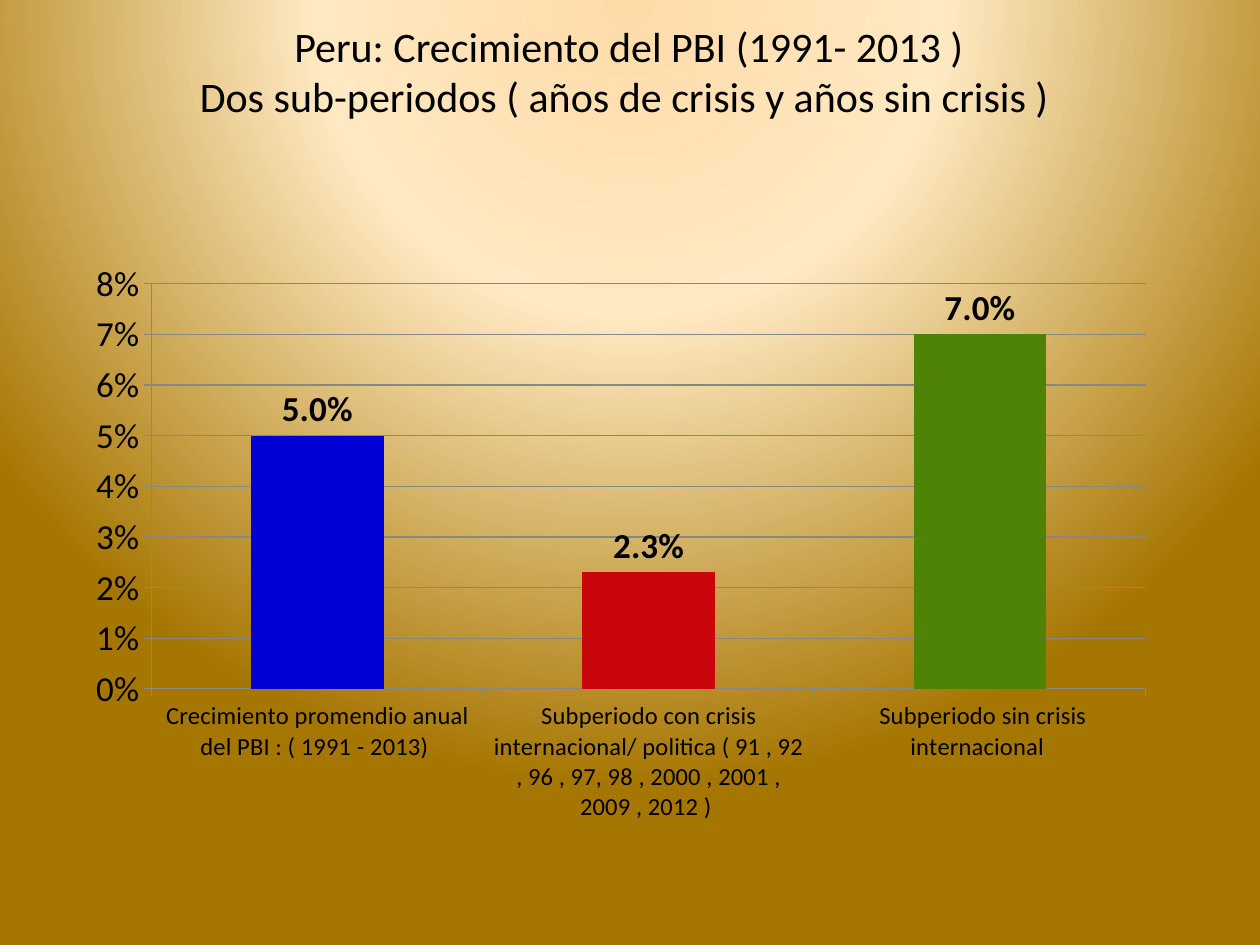
from dataclasses import dataclass

import pptx
import pptx.chart.data
import pptx.dml.color
import pptx.enum.chart
import pptx.enum.text
import pptx.oxml
import pptx.oxml.ns
import pptx.util

EMU_PER_PX = 914400 / 126
FONT = "Calibri"
COLORS = {
    "text": "000000",
    "grid": "878787",
    "average": "0000D5",
    "crisis": "CA060D",
    "calm": "4E8305",
    "glow": "FFDBA9",
    "cream": "FFE9C2",
    "ochre": "A67602",
}


@dataclass
class Period:
    label: str
    growth: float
    color: str


@dataclass
class Box:
    left: int
    top: int
    width: int
    height: int

    def emu(self) -> list[int]:
        return [px(n) for n in (self.left, self.top, self.width, self.height)]


PERIODS = [
    Period("Crecimiento promendio anual del PBI : ( 1991 - 2013) ", 0.05, "average"),
    Period(
        "Subperiodo con crisis internacional/ politica "
        "( 91 , 92 , 96 , 97, 98 , 2000 , 2001 , 2009 , 2012 ) ",
        0.023,
        "crisis",
    ),
    Period(" Subperiodo sin crisis internacional ", 0.07, "calm"),
]


def px(length: int) -> int:
    return round(length * EMU_PER_PX)


def rgb(name: str) -> pptx.dml.color.RGBColor:
    return pptx.dml.color.RGBColor.from_string(COLORS[name])


def style_font(font, size: int, bold: bool = False) -> None:
    font.name = FONT
    font.size = pptx.util.Pt(size)
    font.bold = bold
    font.color.rgb = rgb("text")


def style_line(line) -> None:
    line.color.rgb = rgb("grid")
    line.width = pptx.util.Pt(0.75)


def style_axis(axis, size: int) -> None:
    axis.major_tick_mark = pptx.enum.chart.XL_TICK_MARK.OUTSIDE
    axis.minor_tick_mark = pptx.enum.chart.XL_TICK_MARK.NONE
    style_font(axis.tick_labels.font, size)
    style_line(axis.format.line)


def paint_background(slide) -> None:
    stops = "".join(
        f'<a:gs pos="{percent * 1000}"><a:srgbClr val="{COLORS[name]}"/></a:gs>'
        for percent, name in ((0, "glow"), (40, "cream"), (100, "ochre"))
    )
    background = pptx.oxml.parse_xml(
        f'<p:bg {pptx.oxml.ns.nsdecls("p", "a")}><p:bgPr>'
        f'<a:gradFill rotWithShape="1"><a:gsLst>{stops}</a:gsLst>'
        '<a:path path="circle">'
        '<a:fillToRect l="50000" t="-80000" r="50000" b="180000"/>'
        "</a:path></a:gradFill><a:effectLst/></p:bgPr></p:bg>"
    )
    slide.element.cSld.insert(0, background)


def add_heading(slide, text: str, box: Box) -> None:
    frame = slide.shapes.add_textbox(*box.emu()).text_frame
    frame.word_wrap = True
    frame.vertical_anchor = pptx.enum.text.MSO_ANCHOR.MIDDLE
    heading = frame.paragraphs[0]
    heading.text = text
    heading.alignment = pptx.enum.text.PP_ALIGN.CENTER
    for run in heading.runs:
        style_font(run.font, 24)


def place_plot(chart, x: float, y: float, w: float, h: float) -> None:
    plot_area = chart.element.find(".//" + pptx.oxml.ns.qn("c:plotArea"))
    for old in plot_area.findall(pptx.oxml.ns.qn("c:layout")):
        plot_area.remove(old)
    sizes = "".join(
        f'<c:{tag} val="{value}"/>'
        for tag, value in (("x", x), ("y", y), ("w", w), ("h", h))
    )
    layout = pptx.oxml.parse_xml(
        f'<c:layout {pptx.oxml.ns.nsdecls("c")}><c:manualLayout>'
        '<c:layoutTarget val="inner"/><c:xMode val="edge"/><c:yMode val="edge"/>'
        f"{sizes}</c:manualLayout></c:layout>"
    )
    plot_area.insert(0, layout)


def add_growth_chart(slide, periods: list[Period], box: Box) -> None:
    growth = pptx.chart.data.CategoryChartData(number_format="0.0%")
    growth.categories = [period.label for period in periods]
    growth.add_series("Series 1", [period.growth for period in periods])
    chart = slide.shapes.add_chart(
        pptx.enum.chart.XL_CHART_TYPE.COLUMN_CLUSTERED, *box.emu(), growth
    ).chart
    chart.has_legend = False
    chart.has_title = False
    style_font(chart.font, 10)
    place_plot(chart, 0.067, 0.038, 0.902, 0.715)

    style_axis(chart.category_axis, 14)
    percent_axis = chart.value_axis
    style_axis(percent_axis, 20)
    percent_axis.minimum_scale = 0
    percent_axis.maximum_scale = 0.08
    percent_axis.major_unit = 0.01
    percent_axis.tick_labels.number_format = "0%"
    percent_axis.tick_labels.number_format_is_linked = False
    percent_axis.has_major_gridlines = True
    style_line(percent_axis.major_gridlines.format.line)

    columns = chart.plots[0]
    columns.gap_width = 150
    columns.vary_by_categories = False
    columns.has_data_labels = True
    labels = columns.data_labels
    labels.show_value = True
    labels.number_format = "0.0%"
    labels.number_format_is_linked = False
    labels.position = pptx.enum.chart.XL_LABEL_POSITION.OUTSIDE_END
    style_font(labels.font, 20, bold=True)
    for index, period in enumerate(periods):
        fill = columns.series[0].points[index].format.fill
        fill.solid()
        fill.fore_color.rgb = rgb(period.color)


def main() -> None:
    deck = pptx.Presentation()
    deck.slide_width, deck.slide_height = px(1260), px(945)
    slide = deck.slides.add_slide(deck.slide_layouts[6])
    paint_background(slide)
    add_heading(
        slide,
        "Peru: Crecimiento del PBI (1991- 2013 )\v"
        "Dos sub-periodos ( años de crisis y años sin crisis ) ",
        Box(78, -28, 1102, 197),
    )
    add_growth_chart(slide, PERIODS, Box(78, 262, 1102, 567))
    deck.save("out.pptx")


if __name__ == "__main__":
    main()
